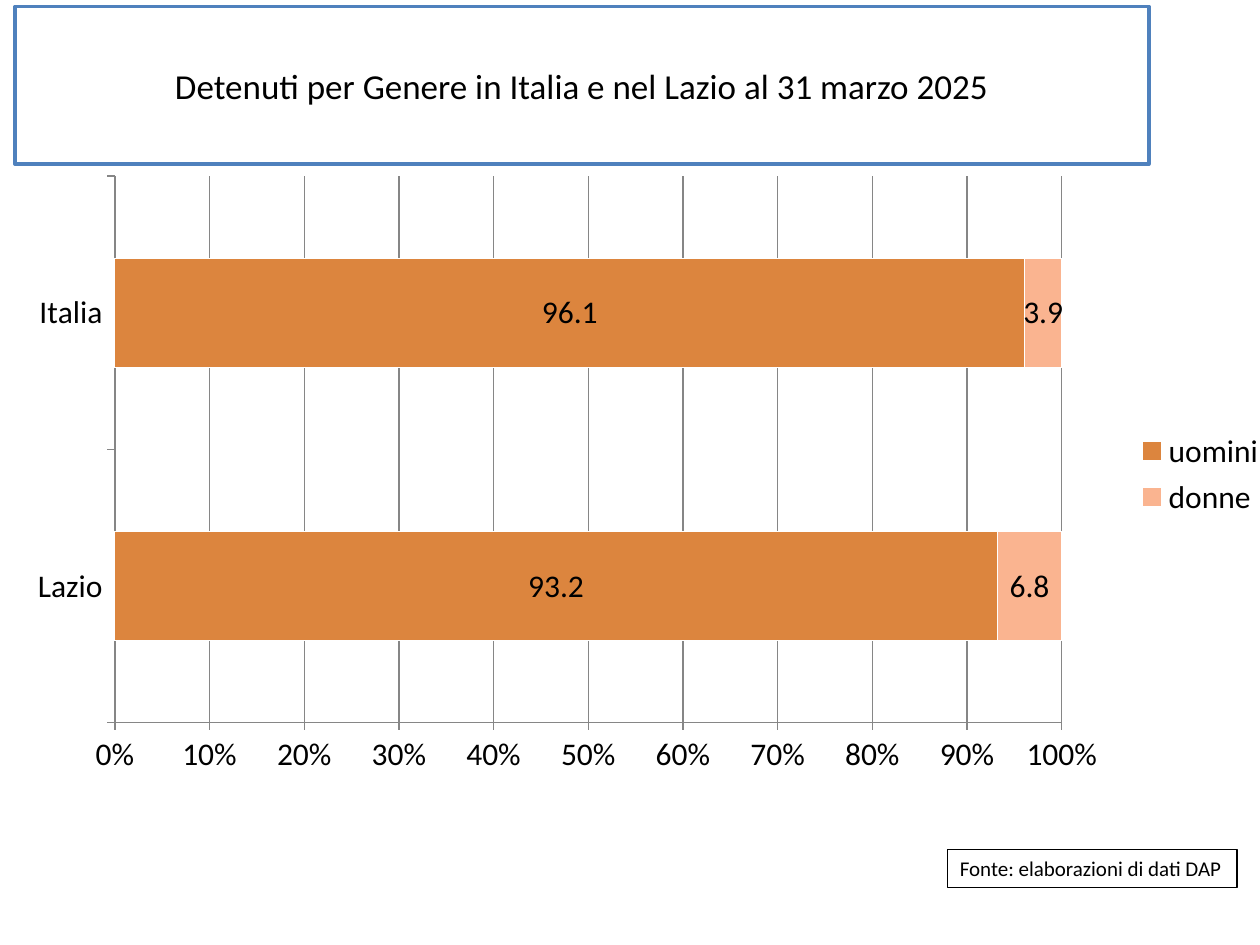
from lxml import etree
from pptx import Presentation
from pptx.chart.data import CategoryChartData
from pptx.dml.color import RGBColor
from pptx.enum.chart import XL_CHART_TYPE, XL_LABEL_POSITION, XL_LEGEND_POSITION, XL_TICK_MARK
from pptx.enum.text import MSO_ANCHOR, PP_ALIGN
from pptx.oxml.ns import qn
from pptx.util import Cm, Pt

BAR_STACKED_100 = XL_CHART_TYPE.BAR_STACKED_100
LABEL_CENTER = XL_LABEL_POSITION.CENTER
LEGEND_RIGHT = XL_LEGEND_POSITION.RIGHT
TICK_OUTSIDE = XL_TICK_MARK.OUTSIDE
MIDDLE = MSO_ANCHOR.MIDDLE
CENTER = PP_ALIGN.CENTER

FONT = "Calibri"
COLORS = {
    "text": "000000",
    "white": "FFFFFF",
    "title_border": "4F81BD",
    "grid": "868686",
    "uomini": "DC853E",
    "donne": "FAB490",
}


def color(name):
    return RGBColor.from_string(COLORS[name])


def set_layout(parent, position, inner, **fractions):
    for old_layout in parent.findall(qn("c:layout")):
        parent.remove(old_layout)
    layout = etree.Element(qn("c:layout"))
    manual = etree.SubElement(layout, qn("c:manualLayout"))
    settings = {"layoutTarget": "inner"} if inner else {}
    settings.update(xMode="edge", yMode="edge", **fractions)
    for tag, value in settings.items():
        etree.SubElement(manual, qn(f"c:{tag}")).set("val", str(value))
    parent.insert(position, layout)


presentation = Presentation()
presentation.slide_width = Cm(25.4)
presentation.slide_height = Cm(19.05)
slide = presentation.slides.add_slide(presentation.slide_layouts[5])

title = slide.shapes.title
title.left, title.top, title.width, title.height = Cm(0.3), Cm(0.13), Cm(22.86), Cm(3.18)
title.text_frame.text = "Detenuti per Genere in Italia e nel Lazio al 31 marzo 2025"
title.text_frame.vertical_anchor = MIDDLE
title.text_frame.paragraphs[0].alignment = CENTER

source = slide.shapes.add_textbox(Cm(19.1), Cm(17.12), Cm(5.84), Cm(0.77))
source.text_frame.text = "Fonte: elaborazioni di dati DAP"
source.text_frame.word_wrap = False

for shape, size, border, border_width in (
    (title, 20, "title_border", 2),
    (source, 12, "text", 0.75),
):
    shape.fill.solid()
    shape.fill.fore_color.rgb = color("white")
    shape.line.color.rgb = color(border)
    shape.line.width = Pt(border_width)
    font = shape.text_frame.paragraphs[0].runs[0].font
    font.name = FONT
    font.size = Pt(size)
    font.color.rgb = color("text")

chart_data = CategoryChartData(number_format="0.0")
chart_data.categories = ["Lazio", "Italia"]
chart_data.add_series("uomini", (93.2, 96.1))
chart_data.add_series("donne", (6.8, 3.9))
chart = slide.shapes.add_chart(
    BAR_STACKED_100, Cm(0.28), Cm(3.3), Cm(25.45), Cm(12.52), chart_data
).chart
chart.has_title = False
chart.font.name = FONT
chart.font.size = Pt(18)
chart.font.color.rgb = color("text")

plot = chart.plots[0]
plot.gap_width = 150
plot.overlap = 100
plot.vary_by_categories = False
for series in plot.series:
    series.format.fill.solid()
    series.format.fill.fore_color.rgb = color(series.name)
    series.format.line.color.rgb = color("white")
    labels = series.data_labels
    labels.show_value = True
    labels.position = LABEL_CENTER
    labels.number_format = "0.0"
    labels.number_format_is_linked = False

value_axis = chart.value_axis
value_axis.minimum_scale = 0
value_axis.has_major_gridlines = True
value_axis.tick_labels.number_format = "0%"
value_axis.tick_labels.number_format_is_linked = False
for axis in (chart.category_axis, value_axis):
    axis.major_tick_mark = TICK_OUTSIDE
    axis.format.line.color.rgb = color("grid")
value_axis.major_gridlines.format.line.color.rgb = color("grid")

chart.has_legend = True
chart.legend.position = LEGEND_RIGHT
chart.legend.include_in_layout = False
plot_area = chart.element.find(".//" + qn("c:plotArea"))
legend = chart.element.find(".//" + qn("c:legend"))
set_layout(plot_area, 0, True, x=0.08, y=0.02, w=0.75, h=0.88)
set_layout(legend, 1, False, x=0.88, y=0.42, w=0.12, h=0.16)

presentation.save("out.pptx")
